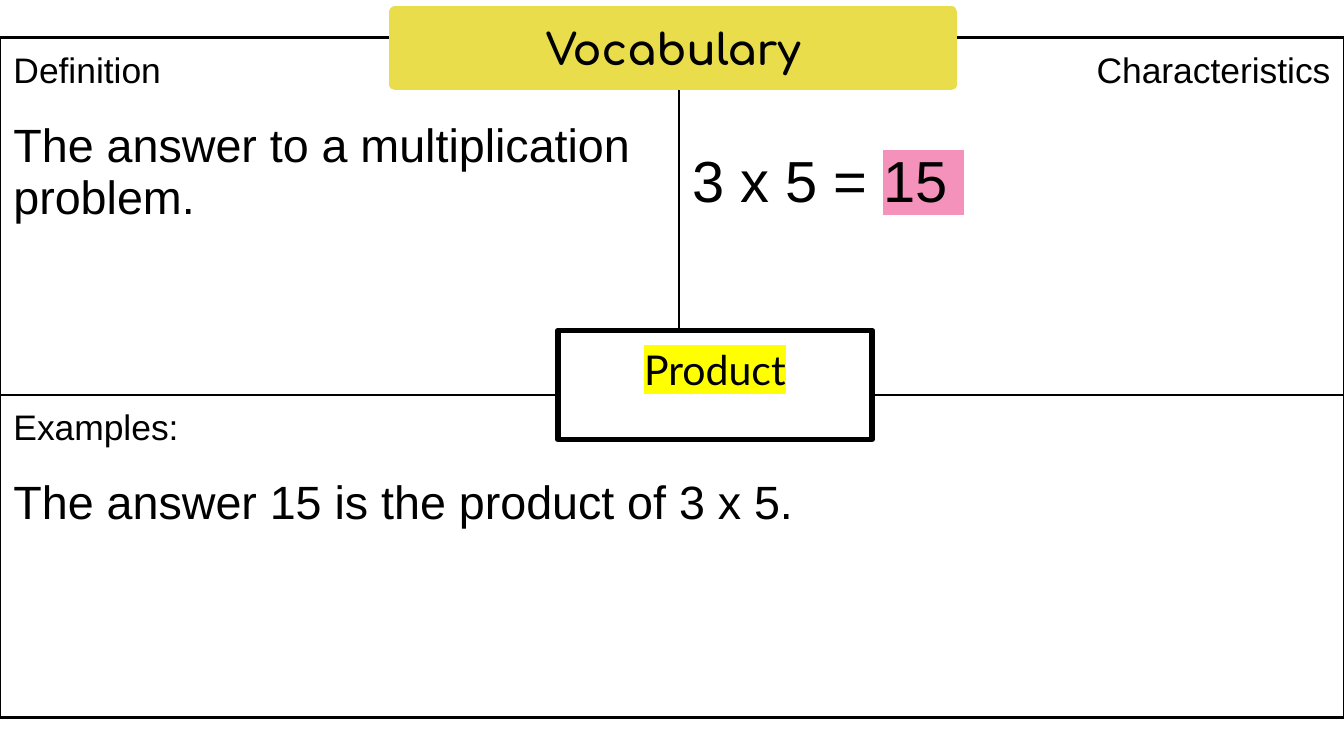
from dataclasses import dataclass

from lxml.etree import SubElement
from pptx import Presentation
from pptx.dml.color import RGBColor
from pptx.enum.shapes import MSO_SHAPE as Shape
from pptx.enum.text import MSO_ANCHOR as Anchor, PP_ALIGN as Align
from pptx.oxml.ns import qn
from pptx.util import Inches, Pt

WIDTH = 10
HEIGHT = WIDTH * 9 / 16
BLACK, WHITE, GOLD = "000000", "FFFFFF", "E9DD4B"
PINK, YELLOW = "F492BC", "FFFF00"
TABLE_TOP = 0.28
COLUMNS = (5.05, 4.95)
ROWS = (2.66, 2.4)


@dataclass(frozen=True)
class Line:
    text: str
    size: float
    font: str = "Arial"
    align: Align = Align.LEFT
    bold: bool = False
    space_before: float = 0
    marked: str = ""
    marker: str = ""


@dataclass(frozen=True)
class Cell:
    row: int
    column: int
    lines: tuple[Line, ...]


@dataclass(frozen=True)
class Label:
    left: float
    top: float
    width: float
    height: float
    outline: str
    outline_width: float
    fill: str
    inset: float
    anchor: Anchor
    line: Line


CELLS = (
    Cell(0, 0, (Line("Definition", 19),
                Line("The answer to a multiplication problem.", 25, space_before=16))),
    Cell(0, 1, (Line("Characteristics", 19, align=Align.RIGHT),
                Line("3 x 5 = ", 31, space_before=32, marked="15 ", marker=PINK))),
    Cell(1, 0, (Line("Examples:", 19),
                Line("The answer 15 is the product of 3 x 5.", 25, space_before=16))),
)
LABELS = (
    Label(4.15, 2.46, 2.34, 0.81, BLACK, 3, WHITE, 0.1, Anchor.TOP,
          Line("", 22, "Lato", Align.CENTER, marked="Product", marker=YELLOW)),
    Label(2.94, 0.09, 4.14, 0.54, GOLD, 6, GOLD, 0.07, Anchor.MIDDLE,
          Line("Vocabulary", 23, "Comfortaa", Align.CENTER, bold=True)),
)


def color(value: str) -> RGBColor:
    return RGBColor.from_string(value)


def set_fill(target, value: str) -> None:
    target.fill.solid()
    target.fill.fore_color.rgb = color(value)


def set_insets(target, inset: float) -> None:
    target.margin_left = target.margin_right = Inches(inset)
    target.margin_top = target.margin_bottom = Inches(inset)


def write_lines(frame, lines: tuple[Line, ...]) -> None:
    for index, line in enumerate(lines):
        paragraph = frame.add_paragraph() if index else frame.paragraphs[0]
        paragraph.alignment = line.align
        paragraph.space_before = Pt(line.space_before)
        font = paragraph.font
        font.name, font.size, font.bold = line.font, Pt(line.size), line.bold
        font.color.rgb = color(BLACK)
        if line.text:
            paragraph.add_run().text = line.text
        if line.marked:
            run = paragraph.add_run()
            run.text = line.marked
            properties = run._r.get_or_add_rPr()
            highlight = SubElement(properties, qn("a:highlight"))
            SubElement(highlight, qn("a:srgbClr"), val=line.marker)


def set_borders(cell, width: float) -> None:
    """Draw all four edges; call before the fill, which must follow them in the XML."""
    properties = cell._tc.get_or_add_tcPr()
    for side in "LRTB":
        edge = SubElement(properties, qn(f"a:ln{side}"), w=str(Pt(width)))
        SubElement(SubElement(edge, qn("a:solidFill")), qn("a:srgbClr"), val=BLACK)


def add_vocabulary_table(slide) -> None:
    table = slide.shapes.add_table(
        len(ROWS), len(COLUMNS), 0, Inches(TABLE_TOP),
        Inches(sum(COLUMNS)), Inches(sum(ROWS))).table
    table.first_row = table.horz_banding = False
    for column, width in zip(table.columns, COLUMNS):
        column.width = Inches(width)
    for row, height in zip(table.rows, ROWS):
        row.height = Inches(height)
    table.cell(1, 0).merge(table.cell(1, 1))
    for cell in table.iter_cells():
        set_borders(cell, 1.5)
        set_fill(cell, WHITE)
        set_insets(cell, 0.1)
    for entry in CELLS:
        write_lines(table.cell(entry.row, entry.column).text_frame, entry.lines)


def add_label(slide, label: Label) -> None:
    shape = slide.shapes.add_shape(
        Shape.RECTANGLE, Inches(label.left), Inches(label.top),
        Inches(label.width), Inches(label.height))
    shape.shadow.inherit = False
    set_fill(shape, label.fill)
    shape.line.color.rgb = color(label.outline)
    shape.line.width = Pt(label.outline_width)
    frame = shape.text_frame
    frame.word_wrap = True
    frame.vertical_anchor = label.anchor
    set_insets(frame, label.inset)
    write_lines(frame, (label.line,))


def main() -> None:
    presentation = Presentation()
    presentation.slide_width = Inches(WIDTH)
    presentation.slide_height = Inches(HEIGHT)
    slide = presentation.slides.add_slide(presentation.slide_layouts[6])
    add_vocabulary_table(slide)
    for label in LABELS:
        add_label(slide, label)
    presentation.save("out.pptx")


if __name__ == "__main__":
    main()
